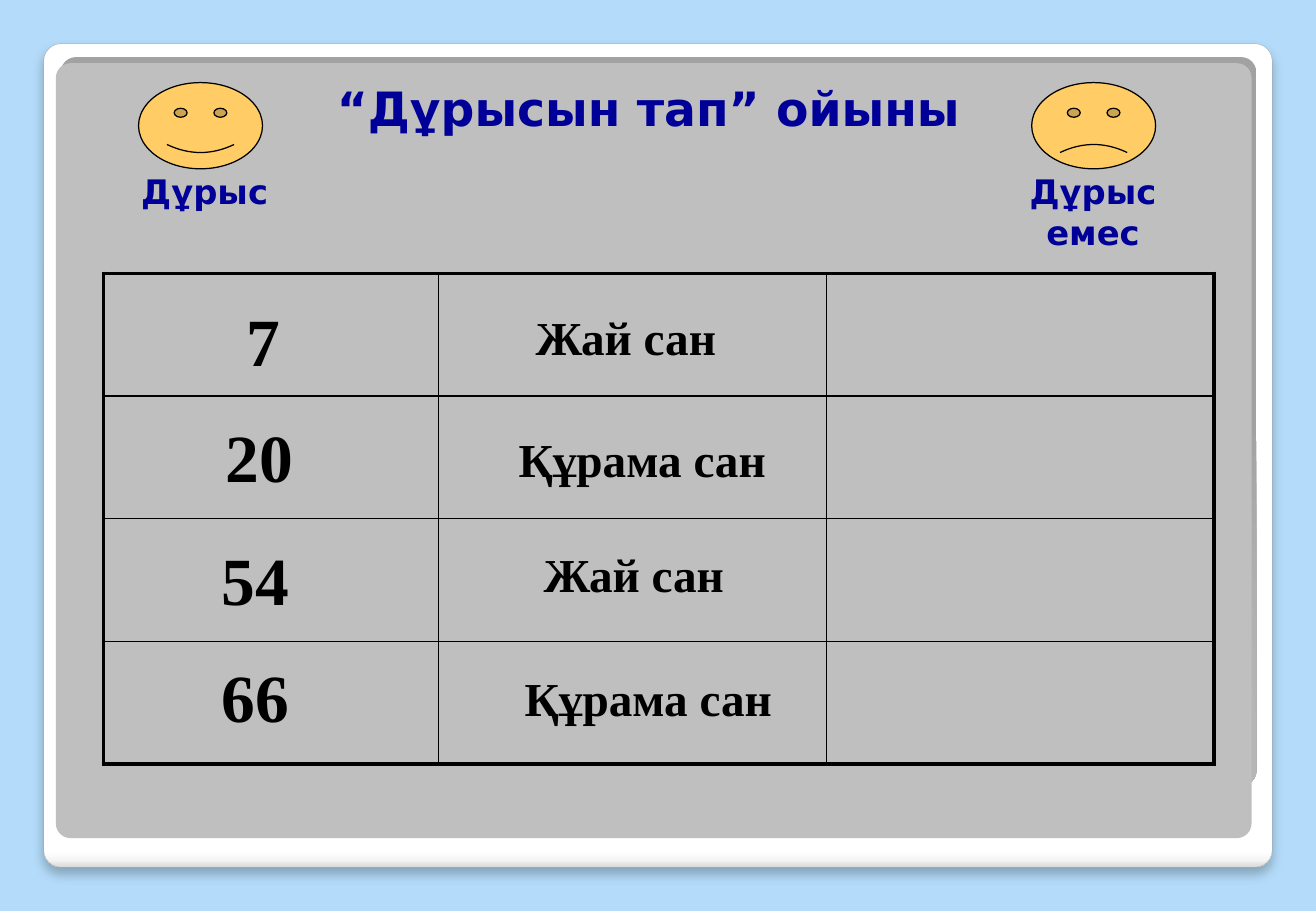
import pptx
import pptx.util
import pptx.oxml
import pptx.oxml.ns
import pptx.dml.color
import pptx.enum.shapes
import pptx.enum.text
from lxml import etree

Inches, Pt = pptx.util.Inches, pptx.util.Pt
qn = pptx.oxml.ns.qn
Shape = pptx.enum.shapes.MSO_SHAPE
Align = pptx.enum.text.PP_ALIGN

COLORS = {
    "sky": "B4DCFA", "frame_edge": "A4A4A4", "panel": "BFBFBF",
    "heading": "000099", "ink": "000000", "face": "FFCC66",
}
FORMATS = {
    "title": {"name": "DejaVu Sans", "size": Pt(28), "bold": True},
    "verdict": {"name": "DejaVu Sans", "size": Pt(20), "bold": True},
    "number": {"name": "Times New Roman", "size": Pt(40), "bold": True},
    "claim": {"name": "Times New Roman", "size": Pt(28), "bold": True},
}
TITLE = ("“Дұрысын тап” ойыны", (1.87, 0.6, 6.93, 0.57))
VERDICTS = [
    ("Дұрыс", 1.14, 0.86, 0.047),
    ("Дұрыс емес", 8.49, 8.17, -0.047),
]
NUMBERS = [
    ("7", (0.96, 2.41, 2.41, 0.77)),
    ("20", (0.93, 3.37, 2.41, 0.77)),
    ("54", (0.85, 4.38, 2.5, 0.77)),
    ("66", (0.85, 5.34, 2.5, 0.77)),
]
CLAIMS = [
    ("Жай сан", (4.31, 2.49, 1.81, 0.57), Align.LEFT),
    ("Құрама сан", (4.08, 3.49, 2.41, 0.57), Align.CENTER),
    ("Жай сан", (4.14, 4.44, 2.15, 0.57), Align.CENTER),
    ("Құрама сан", (4.13, 5.46, 2.41, 0.57), Align.CENTER),
]
GRID_BOX = (0.85, 2.25, 9.13, 4.03)
COLUMN_WIDTHS = (2.76, 3.19, 3.19)
ROW_HEIGHT = 1.01
OUTER_BORDER, INNER_BORDER = 2.25, 1

FRAME_STOPS = [(0, "FFFFFF"), (98, "FFFFFF"), (99, "F7F7F7"), (100, "DADADA")]
FRAME_DIRECTION = ("lin", {"ang": "5400000", "scaled": "0"})
GLOW_STOPS = [(0, "FFFFFF"), (55, "E1E1E1"), (100, "A2A2A2")]
GLOW_DIRECTION = ("path", {"path": "circle"})
GLOW_FOCUS = {"l": "50000", "t": "175000", "r": "50000", "b": "-75000"}


def rgb(name):
    return pptx.dml.color.RGBColor.from_string(COLORS[name])


def child(parent, tag, **attributes):
    return etree.SubElement(parent, qn("a:" + tag), attributes)


def add_shape(kind, box, adjustment, fill=None, line=None, width=0.75):
    shape = slide.shapes.add_shape(kind, *map(Inches, box))
    shape.adjustments[0] = adjustment
    shape.shadow.inherit = False
    if fill:
        shape.fill.solid()
        shape.fill.fore_color.rgb = rgb(fill)
    if line:
        shape.line.color.rgb = rgb(line)
        shape.line.width = Pt(width)
    else:
        shape.line.fill.background()
    return shape


def set_gradient(shape, stops, direction):
    shape.fill.gradient()
    gradient = shape.element.spPr.find(qn("a:gradFill"))
    for part in list(gradient):
        gradient.remove(part)
    stop_list = child(gradient, "gsLst")
    for position, color in stops:
        child(child(stop_list, "gs", pos=str(position * 1000)), "srgbClr", val=color)
    tag, attributes = direction
    return child(gradient, tag, **attributes)


def add_text(text, box, style, color, align=Align.CENTER):
    label = slide.shapes.add_textbox(*map(Inches, box))
    frame = label.text_frame
    frame.word_wrap = True
    frame.auto_size = pptx.enum.text.MSO_AUTO_SIZE.SHAPE_TO_FIT_TEXT
    paragraph = frame.paragraphs[0]
    paragraph.alignment = align
    child(child(paragraph._p.get_or_add_pPr(), "spcBef"), "spcPct", val="50000")
    run = paragraph.add_run()
    run.text = text
    for key, value in FORMATS[style].items():
        setattr(run.font, key, value)
    run.font.color.rgb = rgb(color)


def set_borders(cell, outer_sides):
    properties = cell._tc.get_or_add_tcPr()
    for side, is_outer in outer_sides.items():
        width = Pt(OUTER_BORDER if is_outer else INNER_BORDER)
        border = child(properties, "ln" + side, w=str(width))
        child(child(border, "solidFill"), "srgbClr", val=COLORS["ink"])


def add_grid():
    rows, columns = len(NUMBERS), len(COLUMN_WIDTHS)
    grid = slide.shapes.add_table(rows, columns, *map(Inches, GRID_BOX)).table
    grid.first_row = grid.horz_banding = False
    for column, width in zip(grid.columns, COLUMN_WIDTHS):
        column.width = Inches(width)
    for r, row in enumerate(grid.rows):
        row.height = Inches(ROW_HEIGHT)
        for c, cell in enumerate(row.cells):
            set_borders(cell, {"L": c == 0, "R": c == columns - 1,
                               "T": r == 0, "B": r == rows - 1})
            cell.fill.background()


def add_board():
    frame = add_shape(Shape.ROUNDED_RECTANGLE, (0.36, 0.36, 10.11, 6.78), 0.021,
                      line="frame_edge", width=0.16)
    set_gradient(frame, FRAME_STOPS, FRAME_DIRECTION)
    shadow = child(frame.element.spPr.find(qn("a:effectLst")), "outerShdw",
                   blurRad=str(Pt(6)), dist=str(Pt(4)), dir="5400000", rotWithShape="0")
    child(child(shadow, "srgbClr", val=COLORS["ink"]), "alpha", val="25000")
    glow = add_shape(Shape.ROUNDED_RECTANGLE, (0.5, 0.47, 9.84, 6), 0.021)
    child(set_gradient(glow, GLOW_STOPS, GLOW_DIRECTION), "fillToRect", **GLOW_FOCUS)
    add_shape(Shape.ROUNDED_RECTANGLE, (0.46, 0.52, 9.84, 6.38), 0.019, "panel")


deck = pptx.Presentation()
deck.slide_width, deck.slide_height = Inches(10.83), Inches(7.5)
slide = deck.slides.add_slide(deck.slide_layouts[6])
slide.background.fill.solid()
slide.background.fill.fore_color.rgb = rgb("sky")

add_board()
add_grid()
add_text(*TITLE, "title", "heading")
for number, box in NUMBERS:
    add_text(number, box, "number", "ink")
for claim, box, align in CLAIMS:
    add_text(claim, box, "claim", "ink", align)
for verdict, face_left, text_left, smile in VERDICTS:
    add_shape(Shape.SMILEY_FACE, (face_left, 0.68, 1.02, 0.71), smile, "face", "ink")
    add_text(verdict, (text_left, 1.36, 1.65, 0.43), "verdict", "heading")

deck.save("out.pptx")
